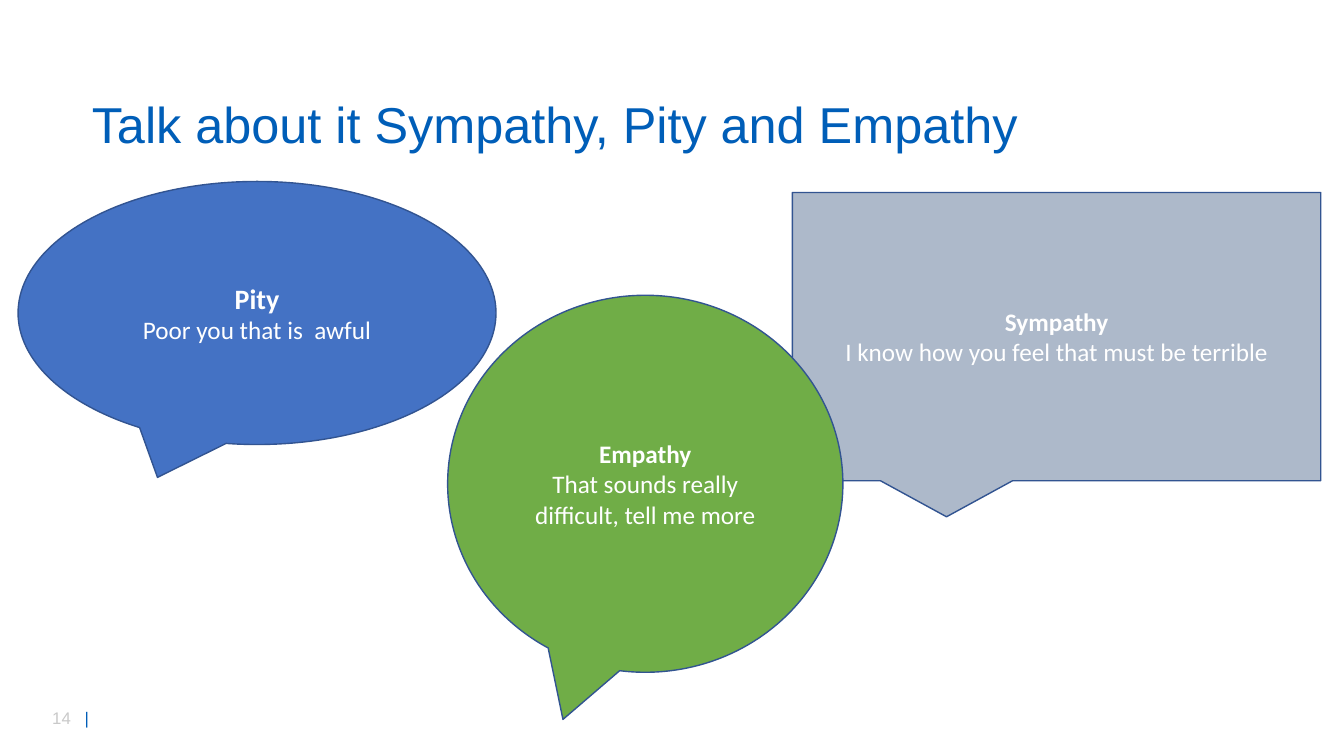
import pptx
import pptx.dml.color
import pptx.enum.shapes
import pptx.enum.text
import pptx.oxml
import pptx.oxml.ns
import pptx.util
from pptx.util import Inches

COLORS = {
    "title": "005EB8",
    "number": "C9C9C9",
    "outline": "325491",
    "pity": "4472C4",
    "sympathy": "ADB9CA",
    "empathy": "70AD47",
    "white": "FFFFFF",
}
SHAPES = pptx.enum.shapes.MSO_SHAPE
MIDDLE = pptx.enum.text.MSO_ANCHOR.MIDDLE


def color(name):
    return pptx.dml.color.RGBColor.from_string(COLORS[name])


def add_span(para, text, color_name, **font_format):
    """Append a run; sizes are in points."""
    span = para.add_run()
    span.text = text
    span.font.color.rgb = color(color_name)
    font_format["size"] = pptx.util.Pt(font_format["size"])
    for attribute, value in font_format.items():
        setattr(span.font, attribute, value)


deck = pptx.Presentation()
deck.slide_width = Inches(13.33)
deck.slide_height = Inches(7.5)
page = deck.slides.add_slide(deck.slide_layouts[6])

# Page number, with the bar on a tab stop
number_box = page.shapes.add_textbox(Inches(0.42), Inches(6.97), Inches(0.94), Inches(0.3))
number_box.text_frame.word_wrap = True
para = number_box.text_frame.paragraphs[0]
add_span(para, "14\t", "number", size=12, name="Arial")
add_span(para, "|", "title", size=12, name="Arial")
tab_list = pptx.oxml.parse_xml(
    f'<a:tabLst {pptx.oxml.ns.nsdecls("a")}><a:tab pos="{Inches(0.32)}" algn="l"/></a:tabLst>'
)
para._p.get_or_add_pPr().append(tab_list)

# Title
title_box = page.shapes.add_textbox(Inches(0.67), Inches(0.93), Inches(9.58), Inches(0.67))
title_box.text_frame.word_wrap = True
title_box.text_frame.vertical_anchor = MIDDLE
title_box.text_frame.margin_left = Inches(0.24)
para = title_box.text_frame.paragraphs[0]
para.line_spacing = 0.9
add_span(para, "Talk about it Sympathy, Pity and Empathy", "title", size=36, name="Arial")

# Speech bubbles, from back to front
bubbles = [
    ("pity", SHAPES.OVAL_CALLOUT, (0.18, 1.8, 4.74, 2.61),
     "Pity", 20, "Poor you that is  awful"),
    ("sympathy", SHAPES.RECTANGULAR_CALLOUT, (7.86, 1.91, 5.24, 2.86),
     "Sympathy", 18, "I know how you feel that must be terrible"),
    ("empathy", SHAPES.OVAL_CALLOUT, (4.44, 2.93, 3.92, 3.74),
     "Empathy", 18, "That sounds really difficult, tell me more"),
]
for fill, preset, place, heading, heading_size, quote in bubbles:
    bubble = page.shapes.add_shape(preset, *map(Inches, place))
    bubble.shadow.inherit = False
    bubble.fill.solid()
    bubble.fill.fore_color.rgb = color(fill)
    bubble.line.color.rgb = color("outline")
    bubble.line.width = pptx.util.Pt(1)
    frame = bubble.text_frame
    frame.word_wrap = True
    frame.vertical_anchor = MIDDLE
    heading_para, quote_para = frame.paragraphs[0], frame.add_paragraph()
    for para, text, size, bold in (
        (heading_para, heading, heading_size, True),
        (quote_para, quote, 18, False),
    ):
        para.alignment = pptx.enum.text.PP_ALIGN.CENTER
        add_span(para, text, "white", size=size, name="Calibri", bold=bold)

deck.save("out.pptx")
